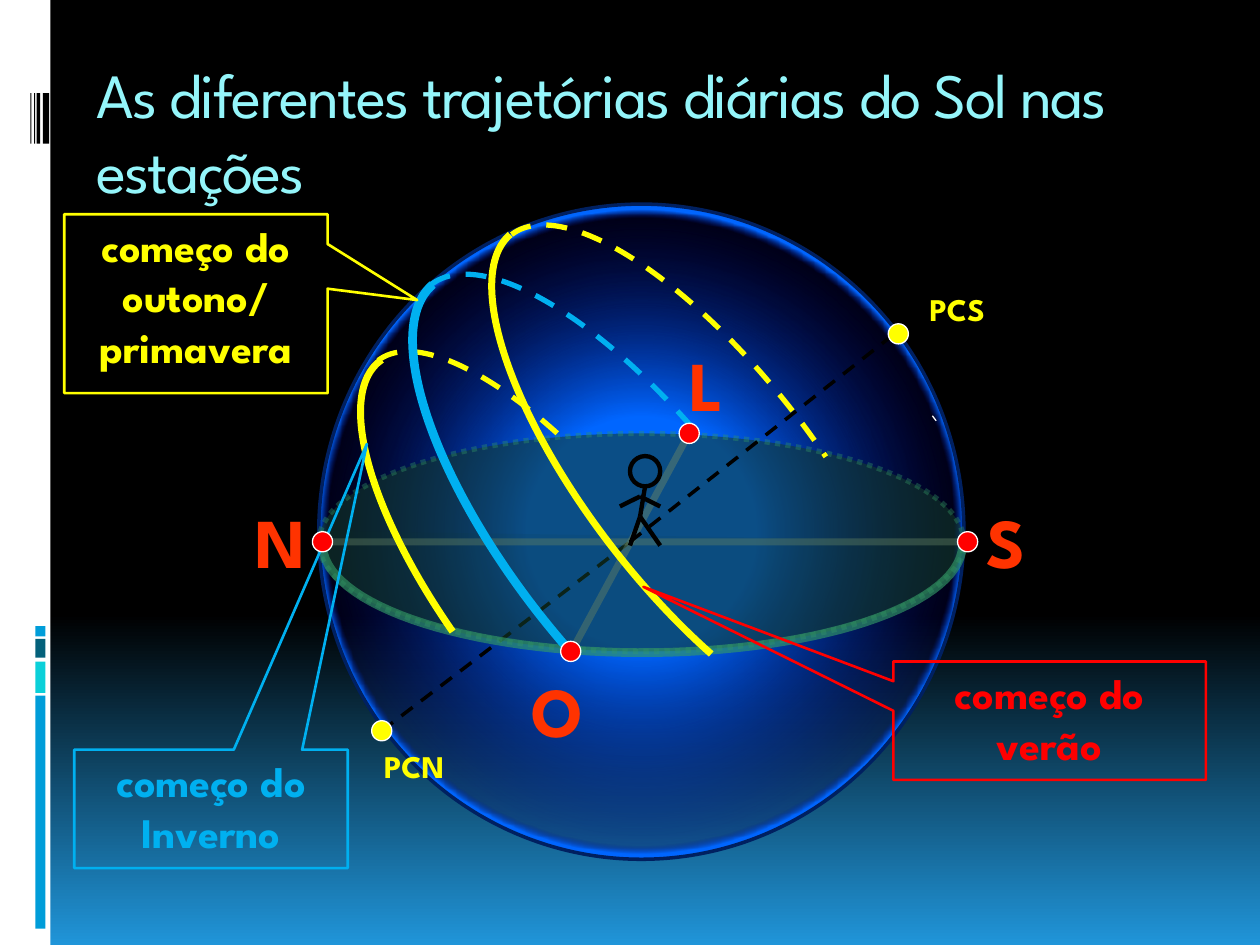
from math import cos, radians, sin
from lxml import etree
from pptx import Presentation
from pptx.dml.color import RGBColor
from pptx.enum.dml import MSO_LINE
from pptx.enum.shapes import MSO_CONNECTOR, MSO_SHAPE
from pptx.enum.text import MSO_ANCHOR, PP_ALIGN
from pptx.oxml.ns import qn
from pptx.util import Inches, Pt

RECT, OVAL, ARC = MSO_SHAPE.RECTANGLE, MSO_SHAPE.OVAL, MSO_SHAPE.ARC
CALLOUT = MSO_SHAPE.RECTANGULAR_CALLOUT
STRAIGHT = MSO_CONNECTOR.STRAIGHT
DASH, DOT = MSO_LINE.DASH, MSO_LINE.ROUND_DOT
TOP, LEFT, CENTER = MSO_ANCHOR.TOP, PP_ALIGN.LEFT, PP_ALIGN.CENTER

BLACK = RGBColor(0x00, 0x00, 0x00)
WHITE = RGBColor(0xFF, 0xFF, 0xFF)
YELLOW = RGBColor(0xFF, 0xFF, 0x00)
RED = RGBColor(0xFF, 0x00, 0x00)
ORANGE = RGBColor(0xFF, 0x33, 0x00)
SKY = RGBColor(0x00, 0xB0, 0xF0)
PALE = RGBColor(0x94, 0xF5, 0xFA)
BLUE = RGBColor(0x00, 0x9D, 0xD9)
TURQUOISE = RGBColor(0x0B, 0xD0, 0xD9)
TEAL = RGBColor(0x04, 0x61, 0x7B)
DAYLIGHT = RGBColor(0x20, 0x95, 0xD9)
BRIGHT = RGBColor(0x00, 0x66, 0xFF)
NIGHT = RGBColor(0x00, 0x00, 0x66)
PURPLE = RGBColor(0x8C, 0x3D, 0x91)
NAVY = RGBColor(0x00, 0x20, 0x60)
AXIS = RGBColor(0xDB, 0xE7, 0xB6)
GROUND = RGBColor(0x14, 0x3C, 0x2B)
GREEN = RGBColor(0x33, 0x99, 0x66)


class Deck:
    font = "League Spartan"
    columns = 100

    def __init__(self):
        self.prs = Presentation()
        self.prs.slide_width, self.prs.slide_height = Inches(10), Inches(7.5)
        self.s = self.prs.slides.add_slide(self.prs.slide_layouts[6])

    def units(self, *cells):
        return [round(c * self.prs.slide_width / self.columns) for c in cells]

    def alpha(self, parent, percent):
        for color in parent.iter(qn("a:srgbClr")):
            etree.SubElement(color, qn("a:alpha")).set("val", str(percent * 1000))

    def gradient(self, holder, stops, angle=None):
        old = holder.find(qn("a:solidFill"))
        grad = etree.Element(qn("a:gradFill"), rotWithShape="1")
        gs_list = etree.SubElement(grad, qn("a:gsLst"))
        for position, color, opacity in stops:
            gs = etree.SubElement(gs_list, qn("a:gs"), pos=str(position * 1000))
            etree.SubElement(gs, qn("a:srgbClr"), val=str(color))
            if opacity < 100:
                self.alpha(gs, opacity)
        if angle is None:
            way = etree.SubElement(grad, qn("a:path"))
            way.set("path", "circle")
            etree.SubElement(way, qn("a:fillToRect"), l="50000", t="50000", r="50000", b="50000")
        else:
            etree.SubElement(grad, qn("a:lin"), ang=str(angle * 60000), scaled="0")
        holder.replace(old, grad)

    def background(self, stops):
        self.s.background.fill.solid()
        self.s.background.fill.fore_color.rgb = BLACK
        self.gradient(next(self.s._element.iter(qn("p:bgPr"))), stops, 90)

    def stroke(self, shape, color, width, dash=None, opacity=100):
        line = shape.line
        if color is None:
            line.fill.background()
            return
        line.color.rgb, line.width = color, Pt(width)
        if dash is not None:
            line.dash_style = dash
        if opacity < 100:
            self.alpha(shape._element.spPr.find(qn("a:ln")), opacity)

    def paint(self, shape, color, opacity=100):
        shape.shadow.inherit = False
        if color is None:
            shape.fill.background()
            return
        shape.fill.solid()
        shape.fill.fore_color.rgb = color
        if opacity < 100:
            self.alpha(shape._element.spPr.find(qn("a:solidFill")), opacity)

    def shape(self, kind, box, fill=None, opacity=100, line=(None, 0), adj=(), rotation=0):
        sp = self.s.shapes.add_shape(kind, *self.units(*box))
        for i, value in enumerate(adj):
            sp.adjustments[i] = value
        sp.rotation = rotation
        self.paint(sp, fill, opacity)
        self.stroke(sp, *line)
        return sp

    def line(self, ends, *style):
        cx = self.s.shapes.add_connector(STRAIGHT, *self.units(*ends))
        etree.SubElement(cx._element.spPr, qn("a:effectLst"))
        self.stroke(cx, *style)

    def outline(self, points, fill, opacity, line):
        places = [self.units(*point) for point in points]
        builder = self.s.shapes.build_freeform(*places[0])
        builder.add_line_segments(places[1:], close=False)
        sp = builder.convert_to_shape()
        self.paint(sp, fill, opacity)
        self.stroke(sp, *line)

    def set_text(self, sp, lines, size, color, bold=True, align=LEFT, spacing=0):
        tf = sp.text_frame
        tf.word_wrap, tf.vertical_anchor = True, TOP
        for i, text in enumerate(lines):
            p = tf.paragraphs[0] if i == 0 else tf.add_paragraph()
            p.alignment = align
            p.font.name, p.font.size = self.font, Pt(size)
            p.font.bold, p.font.color.rgb = bold, color
            r = p.add_run()
            r.text = text
            if spacing:
                r._r.get_or_add_rPr().set("spc", str(spacing * 100))

    def text(self, box, text, *style, **options):
        self.set_text(self.s.shapes.add_textbox(*self.units(*box)), [text], *style, **options)

    def callout(self, box, adj, lines, color):
        sp = self.shape(CALLOUT, box, line=(color, 1.5), adj=adj)
        self.set_text(sp, lines, 24, color, align=CENTER)

    def sun_path(self, box, adj, *style):
        self.shape(ARC, box, line=style, adj=adj, rotation=142.1)

    def dot(self, x, y, color):
        self.shape(OVAL, (x - 0.8, y - 0.8, 1.6, 1.6), color, line=(WHITE, 0.75))


d = Deck()
d.background([(0, BLACK, 100), (65, BLACK, 100), (100, DAYLIGHT, 100)])

d.shape(RECT, (0, 0, 4, 75), WHITE)
for top, height, color in ((55.2, 18.5, BLUE), (52.5, 2.5, TURQUOISE), (50.7, 1.5, TEAL), (49.7, 0.8, BLUE)):
    d.shape(RECT, (2.8, top, 0.8, height), color)
for left, width in ((3.4, 0.5), (2.9, 0.3), (2.7, 0.1), (2.4, 0.1)):
    d.shape(RECT, (left, 7.4, width, 4), BLACK)

sphere = d.shape(OVAL, (25.3, 16.2, 51.2, 52), BRIGHT, line=(NAVY, 2))
d.gradient(sphere._element.spPr, [(25, BRIGHT, 100), (68, NIGHT, 24), (70, BRIGHT, 100),
                                  (88, BRIGHT, 100), (100, PURPLE, 19)])
d.line((30.3, 58, 50, 43), BLACK, 2, DASH)
d.line((45.3, 51.8, 54.7, 34.4), AXIS, 4, None, 45)
for letter, x, y in (("O", 41.2, 52.5), ("N", 19.3, 39.1), ("L", 53.7, 26.6), ("S", 77.3, 39.1)):
    d.text((x, y, 3.9, 7.7), letter, 40, ORANGE)
d.line((25.5, 43, 76.7, 43), AXIS, 4, None, 42)
d.shape(OVAL, (25.3, 34.4, 51.2, 17.3), GROUND, 57, (GREEN, 3, DOT, 36))
d.text((72.8, 22.5, 8.7, 4), "PCS", 18, YELLOW)
d.line((74, 33, 74.3, 33.4), WHITE, 0.75)
d.text((6.7, 3.9, 85, 10), "As diferentes trajetórias diárias do Sol nas estações", 36, PALE,
       bold=False, spacing=-1)

front = [(51 + 25.4 * cos(radians(a)), 43.2 + 8.6 * sin(radians(a))) for a in range(-2, 188, 3)]
d.outline(front, GROUND, 7, (GREEN, 5, None, 64))
d.line((50, 43, 72, 25.7), BLACK, 2, DASH)

d.sun_path((46.8, 13.3, 18, 49.5), (183.15, 53.8), YELLOW, 4)
d.sun_path((46.8, 13.4, 18, 49.5), (54, 124.14), YELLOW, 3, DASH)
d.dot(71.3, 26.5, YELLOW)
d.sun_path((36.3, 23.5, 17.2, 48.5), (54, 75.65), YELLOW, 3, DASH)
d.sun_path((40.4, 17.2, 19, 51.1), (54, 94.77), SKY, 3, DASH)
d.sun_path((40.6, 17.1, 19.1, 51.1), (201.63, 53.8), SKY, 5)
d.sun_path((36.2, 23.6, 17.4, 48.1), (13.49, 54.3), YELLOW, 4)

d.callout((70.9, 52.5, 24.8, 9.4), (-1.3, -1.13), ["começo do verão"], RED)
d.callout((5.1, 17, 20.9, 14.2), (0.84, -0.02), ["começo do outono/", "primavera"], YELLOW)
d.callout((5.9, 59.5, 21.7, 9.4), (0.57, -3.08), ["começo do Inverno"], SKY)
d.text((29.5, 58.8, 8.7, 4), "PCN", 18, YELLOW)

d.dot(30.3, 58, YELLOW)
for x, y in ((25.6, 43), (54.7, 34.4), (45.3, 51.7), (76.8, 43)):
    d.dot(x, y, RED)

d.shape(OVAL, (50, 36.2, 2.4, 2.4), line=(BLACK, 2.5))
for limb in ((51.2, 38.6, 50.8, 41), (50.8, 41, 52.4, 43.3), (50.8, 41, 50, 43.3),
             (50.8, 39.4, 52.4, 40.2), (49.2, 40.2, 50.8, 39.4)):
    d.line(limb, BLACK, 2.5)

d.prs.save("out.pptx")
